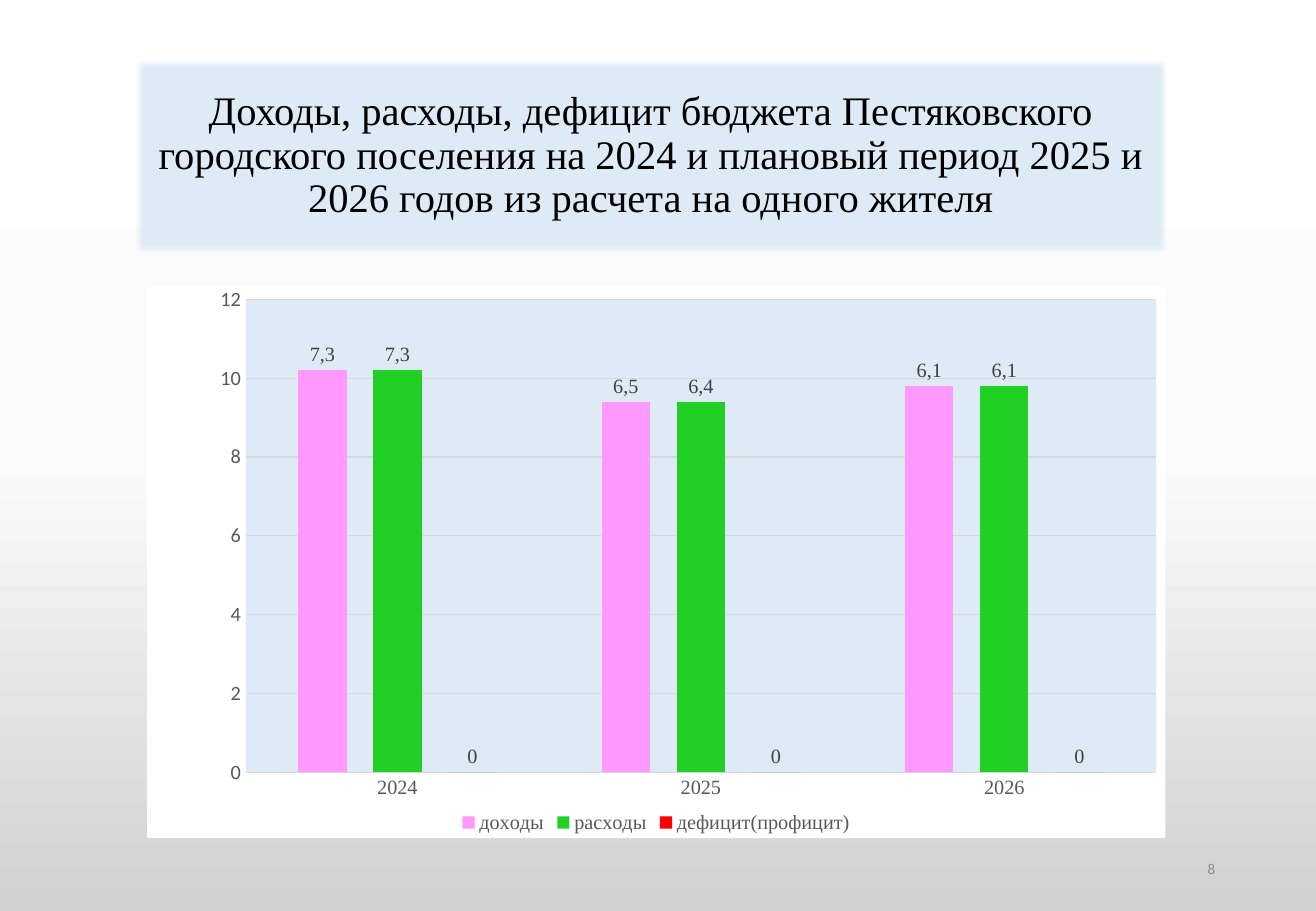
from copy import deepcopy

from lxml import etree
from pptx import Presentation
from pptx.chart import data as cd
from pptx.dml import color as dc
from pptx.enum import chart as ch, text as tx
from pptx.oxml import ns
from pptx.util import Inches, Pt

COLORS = {
    "black": "000000", "white": "FFFFFF", "pale": "DEEBF7",
    "pink": "FF99FF", "green": "20D024", "red": "FF0000",
    "grid": "D9D9D9", "axis": "595959", "label": "404040",
    "page": "8C8C8C", "mid": "FBFBFB", "low": "D1D1D1",
}
SERIF, SANS = "Times New Roman", "Calibri"

YEARS = ["2024", "2025", "2026"]
# name, values, colour, label texts
SERIES = [
    ("доходы", (10.2, 9.4, 9.8), "pink", ("7,3", "6,5", "6,1")),
    ("расходы", (10.2, 9.4, 9.8), "green", ("7,3", "6,4", "6,1")),
    ("дефицит(профицит)", (0, 0, 0), "red", ()),
]


def rgb(name):
    return dc.RGBColor.from_string(COLORS[name])


def paint(fill, name):
    fill.solid()
    fill.fore_color.rgb = rgb(name)


def style(font, size, name, face):
    font.size = Pt(size)
    font.name = face
    font.bold = False
    font.color.rgb = rgb(name)


def place(shape, left, top, width, height):
    shape.left, shape.top = Inches(left), Inches(top)
    shape.width, shape.height = Inches(width), Inches(height)


def write(frame, words, align, size, name, face):
    frame.word_wrap = True
    frame.vertical_anchor = tx.MSO_ANCHOR.MIDDLE
    para = frame.paragraphs[0]
    para.alignment = align
    run = para.add_run()
    run.text = words
    style(run.font, size, name, face)
    return para


def add_back(slide):
    fill = slide.background.fill
    fill.gradient()
    fill.gradient_angle = 270
    # Extend the two default stops to three
    first = fill.gradient_stops[0]._gs
    first.addnext(deepcopy(first))
    stops = zip(fill.gradient_stops, (0, 0.5, 1), ("white", "mid", "low"))
    for stop, pos, name in stops:
        stop.position = pos
        stop.color.rgb = rgb(name)


def add_title(slide, words):
    title = slide.shapes.title
    place(title, 1.12, 0.5, 8.47, 1.57)
    paint(title.fill, "pale")
    para = write(title.text_frame, words, tx.PP_ALIGN.CENTER, 24, "black", SERIF)
    para.line_spacing = 0.9
    # Soft edge
    effects = etree.SubElement(title._element.spPr, ns.qn("a:effectLst"))
    etree.SubElement(effects, ns.qn("a:softEdge"), rad=str(Pt(2.5)))


def area(name):
    """Plain filled area without an outline, for chart parts."""
    part = etree.Element(ns.qn("c:spPr"))
    fill = etree.SubElement(part, ns.qn("a:solidFill"))
    etree.SubElement(fill, ns.qn("a:srgbClr"), val=COLORS[name])
    line = etree.SubElement(part, ns.qn("a:ln"))
    etree.SubElement(line, ns.qn("a:noFill"))
    return part


def set_areas(chart):
    root = chart._chartSpace
    body = root.find(ns.qn("c:chart"))
    body.addnext(area("white"))
    plot = body.find(ns.qn("c:plotArea"))
    plot.append(area("pale"))
    # Inner plot position as shares of the chart
    for old in plot.findall(ns.qn("c:layout")):
        plot.remove(old)
    layout = etree.Element(ns.qn("c:layout"))
    plot.insert(0, layout)
    manual = etree.SubElement(layout, ns.qn("c:manualLayout"))
    rules = [("layoutTarget", "inner"), ("xMode", "edge"), ("yMode", "edge"),
             ("x", "0.097"), ("y", "0.023"), ("w", "0.894"), ("h", "0.858")]
    for tag, val in rules:
        etree.SubElement(manual, ns.qn("c:" + tag), val=val)


def set_axes(chart):
    cat, val = chart.category_axis, chart.value_axis
    for axis, face in ((cat, SERIF), (val, SANS)):
        axis.major_tick_mark = axis.minor_tick_mark = ch.XL_TICK_MARK.NONE
        style(axis.tick_labels.font, 12, "axis", face)
    val.minimum_scale, val.maximum_scale, val.major_unit = 0, 12, 2
    val.has_major_gridlines = True
    val.format.line.fill.background()
    for line in (cat.format.line, val.major_gridlines.format.line):
        line.color.rgb = rgb("grid")
        line.width = Pt(0.75)


def set_bars(series, name, marks):
    paint(series.format.fill, name)
    series.invert_if_negative = False
    labels = series.data_labels
    labels.show_value = True
    labels.position = ch.XL_LABEL_POSITION.OUTSIDE_END
    style(labels.font, 12, "label", SERIF)
    for i, mark in enumerate(marks):
        label = series.points[i].data_label
        run = label.text_frame.paragraphs[0].add_run()
        run.text = mark
        style(run.font, 12, "label", SERIF)
        label.position = ch.XL_LABEL_POSITION.OUTSIDE_END


def add_chart(slide):
    data = cd.CategoryChartData()
    data.categories = YEARS
    for name, vals, _, _ in SERIES:
        data.add_series(name, vals)
    chart = slide.shapes.add_chart(
        ch.XL_CHART_TYPE.COLUMN_CLUSTERED, Inches(1.21), Inches(2.36),
        Inches(8.38), Inches(4.54), data).chart
    style(chart.font, 10, "black", SANS)
    chart.has_title = False
    chart.has_legend = True
    chart.legend.position = ch.XL_LEGEND_POSITION.BOTTOM
    chart.legend.include_in_layout = False
    style(chart.legend.font, 12, "axis", SERIF)
    plot = chart.plots[0]
    plot.vary_by_categories = False
    plot.gap_width, plot.overlap = 219, -56
    for series, (_, _, name, marks) in zip(plot.series, SERIES):
        set_bars(series, name, marks)
    set_axes(chart)
    set_areas(chart)


def add_page(slide, number):
    box = slide.shapes.add_textbox(
        Inches(7.66), Inches(6.95), Inches(2.44), Inches(0.4))
    write(box.text_frame, number, tx.PP_ALIGN.RIGHT, 8.9, "page", SANS)


def main():
    deck = Presentation()
    deck.slide_width, deck.slide_height = Inches(10.83), Inches(7.5)
    slide = deck.slides.add_slide(deck.slide_layouts[5])
    add_back(slide)
    add_title(slide, "Доходы, расходы, дефицит бюджета Пестяковского "
                     "городского поселения на 2024 и плановый период 2025 и "
                     "2026 годов из расчета на одного жителя")
    add_chart(slide)
    add_page(slide, "8")
    deck.save("out.pptx")


if __name__ == "__main__":
    main()
